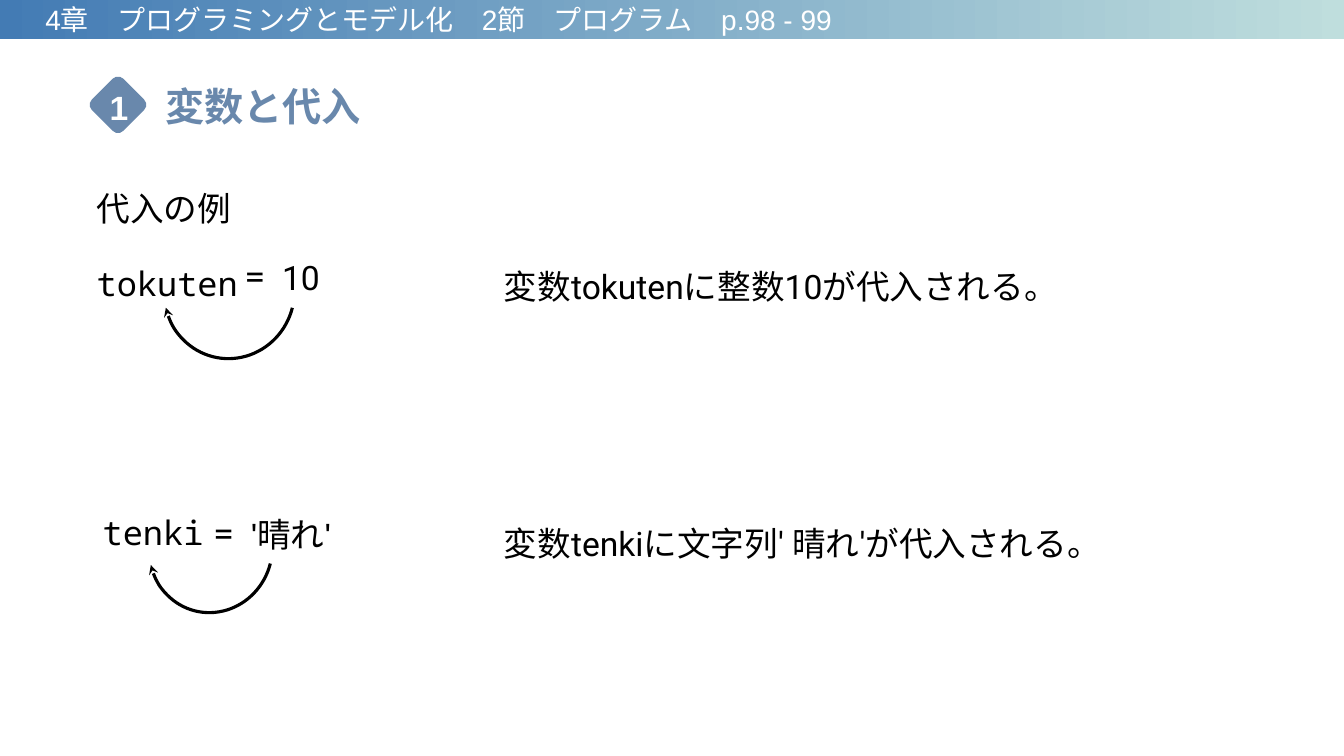
from lxml import etree
from pptx import Presentation
from pptx.dml.color import RGBColor
from pptx.enum.shapes import MSO_SHAPE
from pptx.enum.text import MSO_ANCHOR, MSO_AUTO_SIZE, PP_ALIGN
from pptx.oxml.ns import qn
from pptx.util import Inches, Pt

COLORS = {"bar_start": "437BB4", "bar_end": "BFDEDD", "accent": "6988AC",
          "white": "FFFFFF", "black": "000000"}
SANS, MONO, LATIN = "Roboto", "Noto Sans Mono", "Arial"


def color(name):
    return RGBColor.from_string(COLORS[name])


def write(sp, runs, size=24, ink="black", bold=False):
    """Fill the shape's first paragraph with (text, font) runs."""
    tf = sp.text_frame
    tf.word_wrap = True
    p = tf.paragraphs[0]
    p.alignment = PP_ALIGN.LEFT
    for text, font in runs:
        r = p.add_run()
        r.text = text
        style = {"name": font, "size": Pt(size), "bold": bold}
        for key, value in style.items():
            setattr(r.font, key, value)
        r.font.color.rgb = color(ink)
    return tf


prs = Presentation()
prs.slide_width, prs.slide_height = Inches(13.33), Inches(7.5)
s = prs.slides.add_slide(prs.slide_layouts[5])

# Chapter bar
bar = s.shapes.add_shape(MSO_SHAPE.RECTANGLE, 0, 0, prs.slide_width, Inches(0.39))
bar.shadow.inherit = False
bar.line.fill.background()
bar.fill.gradient()
bar.fill.gradient_angle = 0
for stop, name in zip(bar.fill.gradient_stops, ("bar_start", "bar_end")):
    stop.color.rgb = color(name)
tf = write(bar, [("4章　プログラミングとモデル化　2節　プログラム　p.98 - 99", LATIN)], 20, "white")
tf.vertical_anchor = MSO_ANCHOR.MIDDLE
tf.margin_left = Inches(0.45)

# Section number and title
diamond = s.shapes.add_shape(MSO_SHAPE.ROUNDED_RECTANGLE, Inches(0.95), Inches(0.82),
                             Inches(0.44), Inches(0.44))
diamond.rotation = 45
diamond.shadow.inherit = False
diamond.fill.solid()
diamond.fill.fore_color.rgb = color("accent")
diamond.line.fill.background()
number = s.shapes.add_textbox(Inches(0.99), Inches(0.81), Inches(0.36), Inches(0.5))
write(number, [("1", LATIN)], ink="white", bold=True)

title = s.shapes.title
title.left, title.top, title.width, title.height = map(Inches, (1.54, 0.77, 2.4, 0.57))
tf = write(title, [("変数と代入", SANS)], 28, "accent", True)
tf.vertical_anchor = MSO_ANCHOR.TOP
tf.auto_size = MSO_AUTO_SIZE.NONE

# Heading with the first variable name below it
body = s.shapes.add_textbox(Inches(0.86), Inches(1.62), Inches(8.08), Inches(5.06))
tf = write(body, [("代入の例", SANS)])
p = tf.add_paragraph()
p.space_before = Pt(10)
r = p.add_run()
r.text = "tokuten"
r.font.name, r.font.size = MONO, Pt(24)
r.font.color.rgb = color("black")
for p in tf.paragraphs:
    p.line_spacing = 1.5

# Remaining parts of both assignments and their explanations
labels = [
    (2.33, 2.49, 0.48, [("=", MONO)]),
    (2.7, 2.5, 0.8, [("10", SANS)]),
    (4.9, 2.59, 6.17, [("変数tokutenに整数10が代入される。", SANS)]),
    (0.92, 5.03, 1.57, [("tenki", MONO)]),
    (2.02, 5.04, 0.48, [("=", MONO)]),
    (2.39, 5.05, 1.27, [("'", LATIN), ("晴れ", SANS), ("'", LATIN)]),
    (4.9, 5.14, 6.17, [("変数tenkiに文字列' 晴れ'が代入される。", SANS)]),
]
for left, top, width, runs in labels:
    box = s.shapes.add_textbox(Inches(left), Inches(top), Inches(width), Inches(0.5))
    write(box, runs)

# Curved arrows from value to variable
for left, top, width, height, end in [(1.61, 2.25, 1.33, 1.29, 36.97),
                                      (1.45, 4.83, 1.28, 1.22, 36.09)]:
    arc = s.shapes.add_shape(MSO_SHAPE.ARC, Inches(left), Inches(top),
                             Inches(width), Inches(height))
    arc.adjustments[0], arc.adjustments[1] = 162, end
    arc.rotation = 104.3
    arc.shadow.inherit = False
    arc.fill.background()
    arc.line.color.rgb = color("black")
    arc.line.width = Pt(2.25)
    etree.SubElement(arc.line._get_or_add_ln(), qn("a:tailEnd"), type="stealth")

prs.save("out.pptx")
